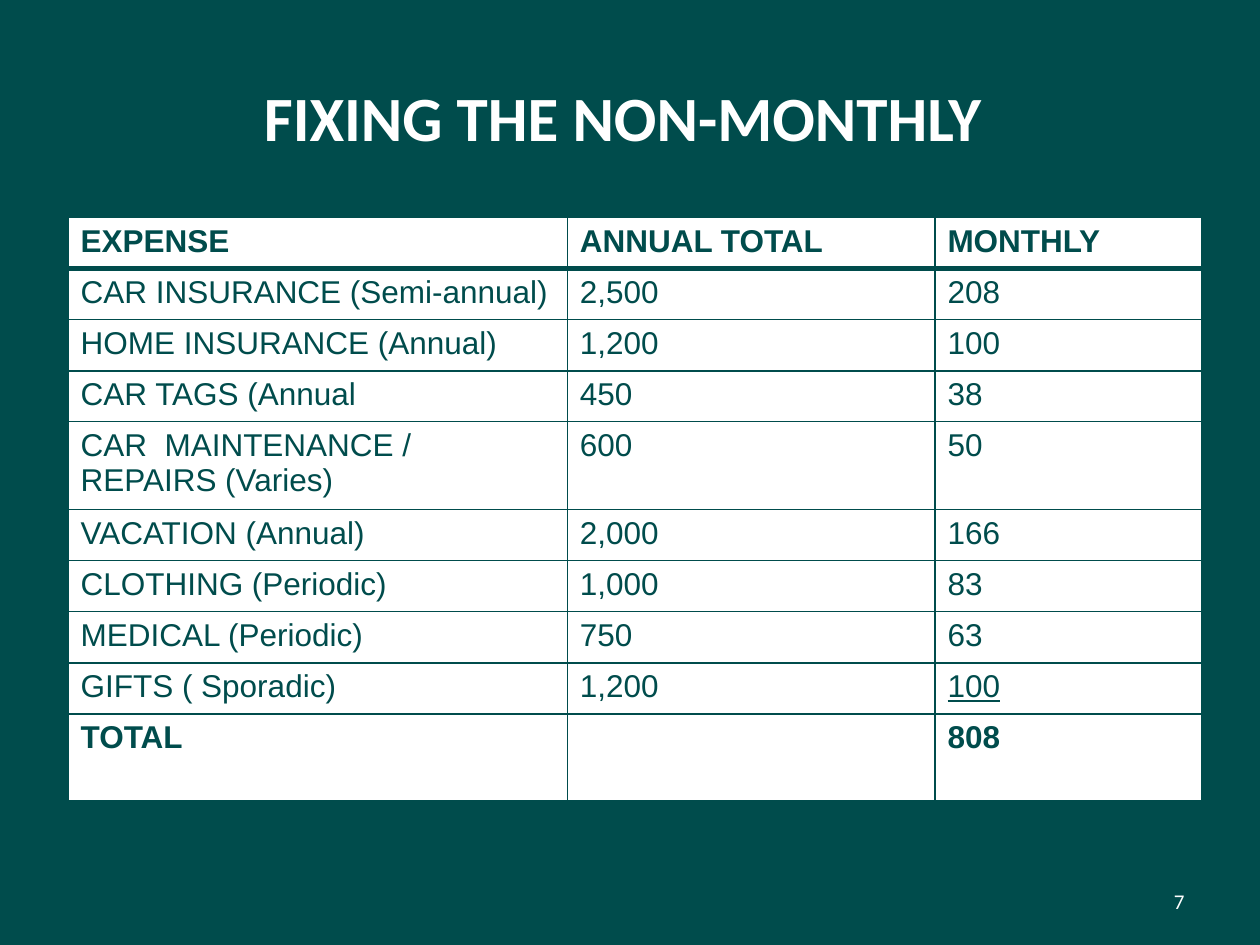
from lxml import etree
from pptx import Presentation
from pptx.dml.color import RGBColor
from pptx.enum.text import MSO_ANCHOR, PP_ALIGN
from pptx.oxml.ns import qn
from pptx.util import Pt

TEAL = RGBColor(0x00, 0x4C, 0x4C)
WHITE = RGBColor(0xFF, 0xFF, 0xFF)
CENTER, RIGHT = PP_ALIGN.CENTER, PP_ALIGN.RIGHT
MIDDLE = MSO_ANCHOR.MIDDLE

COLUMN_WIDTHS = (285.3, 210.1, 152.6)
ROW_HEIGHT = 29.2
SPECIAL_HEIGHTS = {3: 27.5, 4: 47.7, 9: 49.7}
EXPENSES = (
    ("EXPENSE", "ANNUAL TOTAL", "MONTHLY"),
    ("CAR INSURANCE (Semi-annual)", "2,500", "208"),
    ("HOME INSURANCE (Annual)", "1,200", "100"),
    ("CAR TAGS (Annual", "450", "38"),
    ("CAR  MAINTENANCE / REPAIRS (Varies)", "600", "50"),
    ("VACATION (Annual)", "2,000", "166"),
    ("CLOTHING (Periodic)", "1,000", "83"),
    ("MEDICAL (Periodic)", "750", "63"),
    ("GIFTS ( Sporadic)", "1,200", "100"),
    ("TOTAL", "", "808"),
)


def add_run(paragraph, text, font_name, size, color, bold=False):
    """Append a styled run to a paragraph and return it."""
    run = paragraph.add_run()
    run.text = text
    run.font.name = font_name
    run.font.size = Pt(size)
    run.font.bold = bold
    run.font.color.rgb = color
    return run


def add_text(slide, bounds, text, size, alignment, bold=False):
    """Add a vertically centred white text box."""
    shape = slide.shapes.add_textbox(*map(Pt, bounds))
    frame = shape.text_frame
    frame.word_wrap = True
    frame.vertical_anchor = MIDDLE
    paragraph = frame.paragraphs[0]
    paragraph.alignment = alignment
    add_run(paragraph, text, "Calibri", size, WHITE, bold)


def set_borders(cell, top, bottom):
    """Draw teal borders on all four sides of a cell."""
    properties = cell._tc.get_or_add_tcPr()
    for side, width in (("L", 1), ("R", 1), ("T", top), ("B", bottom)):
        line = etree.SubElement(properties, qn(f"a:ln{side}"), w=str(Pt(width)))
        fill = etree.SubElement(line, qn("a:solidFill"))
        etree.SubElement(fill, qn("a:srgbClr"), val=str(TEAL))


def add_expense_table(slide):
    """Add the expense table with a heavy rule under its header."""
    heights = [SPECIAL_HEIGHTS.get(i, ROW_HEIGHT) for i in range(len(EXPENSES))]
    table = slide.shapes.add_table(
        len(EXPENSES), len(COLUMN_WIDTHS), Pt(38.9), Pt(124.3),
        Pt(sum(COLUMN_WIDTHS)), Pt(sum(heights))).table
    for column, width in zip(table.columns, COLUMN_WIDTHS):
        column.width = Pt(width)
    last = len(EXPENSES) - 1
    for row_index, values in enumerate(EXPENSES):
        table.rows[row_index].height = Pt(heights[row_index])
        for column_index, value in enumerate(values):
            cell = table.cell(row_index, column_index)
            set_borders(cell, 3 if row_index == 1 else 1, 3 if row_index == 0 else 1)
            cell.fill.solid()
            cell.fill.fore_color.rgb = WHITE
            if value:
                run = add_run(cell.text_frame.paragraphs[0], value, "Arial", 18,
                              TEAL, row_index in (0, last))
                if (row_index, column_index) == (last - 1, 2):
                    run.font.underline = True


def main():
    """Build and save the non-monthly expenses slide."""
    presentation = Presentation()
    presentation.slide_width, presentation.slide_height = Pt(720), Pt(540)
    slide = presentation.slides.add_slide(presentation.slide_layouts[6])
    slide.background.fill.solid()
    slide.background.fill.fore_color.rgb = TEAL
    add_text(slide, (36, 21.6, 648, 90), "FIXING THE NON-MONTHLY ", 36, CENTER, True)
    add_expense_table(slide)
    add_text(slide, (516, 500.5, 168, 28.75), "7", 12, RIGHT)
    presentation.save("out.pptx")


if __name__ == "__main__":
    main()
